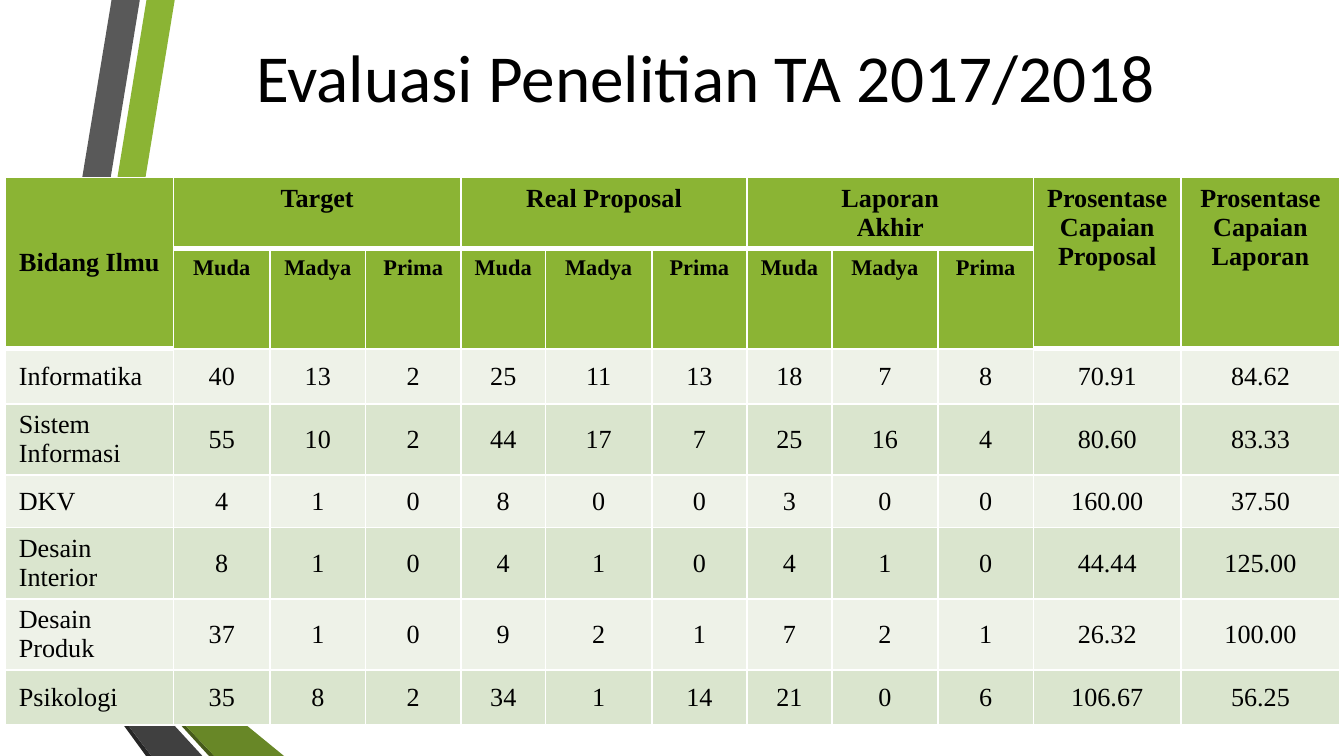
from itertools import product

from lxml.etree import SubElement
from pptx import Presentation
from pptx.dml.color import RGBColor as Color
from pptx.enum.text import MSO_ANCHOR as Anchor, PP_ALIGN as Align
from pptx.oxml.ns import qn
from pptx.util import Inches, Pt

THEME = {
    "green": "8BB434", "grey": "595959", "black": "000000", "white": "FFFFFF",
    "dark_green": "688727", "deep_green": "465A1A",
    "dark_grey": "404040", "deep_grey": "262626",
    "bands": ("EEF2E8", "DAE5CE"),
    "title_font": "Calibri", "table_font": "Times New Roman",
    "title_size": 36, "table_size": 14, "level_size": 12,
}

# Ribbon corners, in hundredths of an inch
RIBBONS = [
    ("green", [(38, 434), (58, 437), (130, 0), (109, 0)]),
    ("grey", [(104, 0), (83, 0), (12, 430), (33, 433)]),
    ("deep_grey", [(12, 430), (109, 563), (113, 563)]),
    ("deep_green", [(38, 434), (156, 563), (160, 563)]),
    ("dark_green", [(38, 434), (160, 563), (212, 563), (58, 437)]),
    ("dark_grey", [(151, 563), (36, 438), (33, 433), (12, 430), (113, 563)]),
]

COLUMNS = [1.25, 0.72, 0.71, 0.71] + [0.63, 0.79, 0.71] * 2 + [1.1, 1.18]
ROWS = [0.52, 0.74, 0.41, 0.53, 0.39, 0.53, 0.53, 0.41]
HEADER_ROWS = 2
GROUPS = ["Target", "Real Proposal", "Laporan\nAkhir"]
LEVELS = ["Muda", "Madya", "Prima"]
RESULTS = [
    ["Informatika", 40, 13, 2, 25, 11, 13, 18, 7, 8, "70.91", "84.62"],
    ["Sistem Informasi", 55, 10, 2, 44, 17, 7, 25, 16, 4, "80.60", "83.33"],
    ["DKV", 4, 1, 0, 8, 0, 0, 3, 0, 0, "160.00", "37.50"],
    ["Desain Interior", 8, 1, 0, 4, 1, 0, 4, 1, 0, "44.44", "125.00"],
    ["Desain Produk", 37, 1, 0, 9, 2, 1, 7, 2, 1, "26.32", "100.00"],
    ["Psikologi", 35, 8, 2, 34, 1, 14, 21, 0, 6, "106.67", "56.25"],
]


def format_text(text_frame, align, color, **font_format):
    for paragraph in text_frame.paragraphs:
        paragraph.alignment = align
        for run in paragraph.runs:
            run.font.color.rgb = Color.from_string(color)
            for name, value in font_format.items():
                setattr(run.font, name, value)


def add_borders(cell, color, bottom_width):
    """Rule all four sides 1 pt wide, except the bottom."""
    properties = cell._tc.get_or_add_tcPr()
    for side, width in {"L": 1, "R": 1, "T": 1, "B": bottom_width}.items():
        line = SubElement(properties, qn(f"a:ln{side}"), w=str(Pt(width)))
        fill = SubElement(line, qn("a:solidFill"))
        SubElement(fill, qn("a:srgbClr"), val=color)


presentation = Presentation()
presentation.slide_width = Inches(10)
presentation.slide_height = presentation.slide_width * 9 // 16
slide = presentation.slides.add_slide(presentation.slide_layouts[5])

# Ribbons
for color, corners in RIBBONS:
    builder = slide.shapes.build_freeform(*corners[0], scale=Inches(0.01))
    builder.add_line_segments(corners[1:], close=True)
    ribbon = builder.convert_to_shape()
    ribbon.shadow.inherit = False
    ribbon.fill.solid()
    ribbon.fill.fore_color.rgb = Color.from_string(THEME[color])
    ribbon.line.fill.background()

# Title
title = slide.shapes.title
title_box = {"left": 1.14, "top": 0.02, "width": 8.22, "height": 1.08}
for name, value in title_box.items():
    setattr(title, name, Inches(value))
title.text_frame.text = "Evaluasi Penelitian TA 2017/2018"
title.text_frame.vertical_anchor = Anchor.MIDDLE
format_text(title.text_frame, Align.CENTER, THEME["black"],
            name=THEME["title_font"], size=Pt(THEME["title_size"]))

# Table grid
table = slide.shapes.add_table(
    len(ROWS), len(COLUMNS), Inches(0.04), Inches(1.32),
    Inches(sum(COLUMNS)), Inches(sum(ROWS))).table
table.horz_banding = False
for column, width in zip(table.columns, COLUMNS):
    column.width = Inches(width)
for row, height in zip(table.rows, ROWS):
    row.height = Inches(height)

# Header cells that span rows or columns
for column in (0, 10, 11):
    table.cell(0, column).merge(table.cell(1, column))
for column in (1, 4, 7):
    table.cell(0, column).merge(table.cell(0, column + 2))

group_row = ["Bidang Ilmu"]
for group in GROUPS:
    group_row += [group, "", ""]
group_row += ["Prosentase Capaian Proposal", "Prosentase Capaian Laporan"]
level_row = ["", *LEVELS * len(GROUPS), "", ""]
contents = [group_row, level_row, *RESULTS]

# Cell text and format
for row, column in product(range(len(ROWS)), range(len(COLUMNS))):
    cell = table.cell(row, column)
    is_header = row < HEADER_ROWS
    is_tall = is_header and column in (0, 10, 11)
    add_borders(cell, THEME["white"], 3 if row == 0 or is_tall else 1)
    cell.fill.solid()
    cell.fill.fore_color.rgb = Color.from_string(
        THEME["green"] if is_header else THEME["bands"][row % 2])
    if cell.is_spanned:
        continue
    cell.text = str(contents[row][column])
    cell.vertical_anchor = (
        Anchor.TOP if is_header and column else Anchor.MIDDLE)
    if column:
        cell.margin_left = cell.margin_right = Inches(0.05)
    format_text(
        cell.text_frame,
        Align.CENTER if is_header or column else Align.LEFT,
        THEME["black"], name=THEME["table_font"], bold=is_header,
        size=Pt(THEME["level_size" if row == 1 else "table_size"]))

presentation.save("out.pptx")
